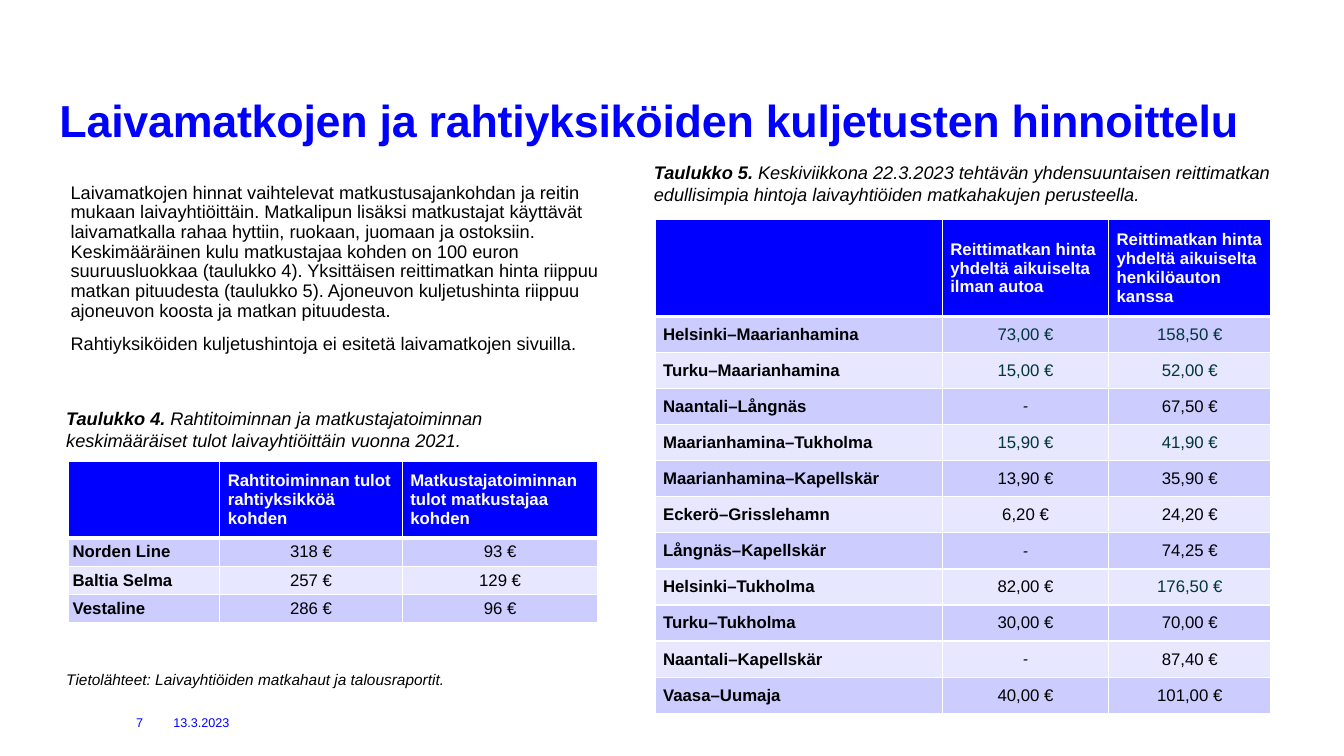
from typing import NamedTuple

from lxml.etree import SubElement
from pptx import Presentation
from pptx.dml.color import RGBColor
from pptx.enum.text import MSO_ANCHOR, PP_ALIGN
from pptx.oxml.ns import qn
from pptx.util import Cm, Pt

BLUE, BLACK, WHITE, TEAL = "0000FF", "000000", "FFFFFF", "003539"
BANDS = ("CCCCFF", "E7E7FF")

INCOME_HEADINGS = ("", "Rahtitoiminnan tulot rahtiyksikköä kohden",
                   "Matkustajatoiminnan tulot matkustajaa kohden")
INCOME_ROWS = (
    ("Norden Line", "318 €", "93 €"),
    ("Baltia Selma", "257 €", "129 €"),
    ("Vestaline", "286 €", "96 €"),
)
FARE_HEADINGS = ("", "Reittimatkan hinta yhdeltä aikuiselta ilman autoa",
                 "Reittimatkan hinta yhdeltä aikuiselta henkilöauton kanssa")
FARE_ROWS = (
    ("Helsinki–Maarianhamina", "73,00 €", "158,50 €"),
    ("Turku–Maarianhamina", "15,00 €", "52,00 €"),
    ("Naantali–Långnäs", "-", "67,50 €"),
    ("Maarianhamina–Tukholma", "15,90 €", "41,90 €"),
    ("Maarianhamina–Kapellskär", "13,90 €", "35,90 €"),
    ("Eckerö–Grisslehamn", "6,20 €", "24,20 €"),
    ("Långnäs–Kapellskär", "-", "74,25 €"),
    ("Helsinki–Tukholma", "82,00 €", "176,50 €"),
    ("Turku–Tukholma", "30,00 €", "70,00 €"),
    ("Naantali–Kapellskär", "-", "87,40 €"),
    ("Vaasa–Uumaja", "40,00 €", "101,00 €"),
)
TEAL_FARES = {"73,00 €", "158,50 €", "15,00 €", "52,00 €", "15,90 €", "41,90 €", "176,50 €"}
PRICING_TEXT = (
    "Laivamatkojen hinnat vaihtelevat matkustusajankohdan ja reitin mukaan "
    "laivayhtiöittäin. Matkalipun lisäksi matkustajat käyttävät laivamatkalla rahaa "
    "hyttiin, ruokaan, juomaan ja ostoksiin. Keskimääräinen kulu matkustajaa kohden on "
    "100 euron suuruusluokkaa (taulukko 4). Yksittäisen reittimatkan hinta riippuu matkan "
    "pituudesta (taulukko 5). Ajoneuvon kuljetushinta riippuu ajoneuvon koosta ja matkan "
    "pituudesta.",
    "Rahtiyksiköiden kuljetushintoja ei esitetä laivamatkojen sivuilla.",
)


class Box(NamedTuple):
    """Left, top, width and height in centimetres."""
    left: float
    top: float
    width: float
    height: float

    def lengths(self):
        return [Cm(value) for value in self]


def color(hex_string):
    return RGBColor.from_string(hex_string)


def write(paragraph, text, size=12, fill=BLACK, bold=False, italic=False, spacing=None):
    run = paragraph.add_run()
    run.text = text
    font = run.font
    font.name, font.size, font.bold, font.italic = "Arial", Pt(size), bold, italic
    font.color.rgb = color(fill)
    if spacing is not None:
        font._element.set("spc", str(round(spacing * 100)))


def add_frame(slide, box, anchor=MSO_ANCHOR.TOP, inset_x=0, inset_y=0):
    frame = slide.shapes.add_textbox(*box.lengths()).text_frame
    frame.word_wrap = True
    frame.vertical_anchor = anchor
    frame.margin_left = frame.margin_right = Cm(inset_x)
    frame.margin_top = frame.margin_bottom = Cm(inset_y)
    return frame


def add_title(slide, box):
    title = add_frame(slide, box, MSO_ANCHOR.BOTTOM).paragraphs[0]
    title.line_spacing = 0.85
    write(title, "Laivamatkojen ja rahtiyksiköiden kuljetusten hinnoittelu",
          size=32, fill=BLUE, bold=True, spacing=-0.2)


def add_body(slide, box):
    frame = add_frame(slide, box)
    for index, text in enumerate(PRICING_TEXT):
        paragraph = frame.add_paragraph() if index else frame.paragraphs[0]
        paragraph.line_spacing = 0.9
        paragraph.space_before = Pt(10 if index else 0)
        write(paragraph, text, size=13)


def add_caption(slide, box, label, text):
    caption = add_frame(slide, box, inset_x=0.25, inset_y=0.13).paragraphs[0]
    write(caption, label + " ", size=13, bold=True, italic=True)
    write(caption, text, size=13, italic=True)


def add_sources(slide, box):
    sources = add_frame(slide, box, inset_x=0.25, inset_y=0.13).paragraphs[0]
    write(sources, "Tietolähteet: Laivayhtiöiden matkahaut ja talousraportit.",
          size=11, italic=True)


def add_footer(slide, box, date_offset):
    for offset, text in ((0, "7"), (date_offset, "13.3.2023")):
        part = Box(box.left + offset, box.top, box.width - offset, box.height)
        write(add_frame(slide, part, MSO_ANCHOR.MIDDLE).paragraphs[0], text, size=9, fill=BLUE)


def set_borders(cell, bottom):
    """Draw white cell borders, before the fill is set."""
    properties = cell._tc.get_or_add_tcPr()
    for side, width in (("L", 1), ("R", 1), ("T", 1), ("B", bottom)):
        line = SubElement(properties, qn(f"a:ln{side}"), w=str(Pt(width)))
        fill = SubElement(line, qn("a:solidFill"))
        SubElement(fill, qn("a:srgbClr"), val=WHITE)


def style_cell(cell, fill, inset, bottom=1):
    set_borders(cell, bottom)
    cell.fill.solid()
    cell.fill.fore_color.rgb = color(fill)
    cell.vertical_anchor = MSO_ANCHOR.MIDDLE
    cell.margin_left = cell.margin_right = cell.margin_top = cell.margin_bottom = Cm(inset)


def add_price_table(slide, box, headings, rows, widths, header_height, inset, teal=()):
    """Place a table whose rows share the height left below the header."""
    table = slide.shapes.add_table(len(rows) + 1, len(headings), *box.lengths()).table
    table.horz_banding = False
    for column, width in zip(table.columns, widths):
        column.width = Cm(width)
    row_height = (box.height - header_height) / len(rows)
    for index, row in enumerate(table.rows):
        row.height = Cm(row_height if index else header_height)

    for column, heading in enumerate(headings):
        cell = table.cell(0, column)
        style_cell(cell, BLUE, 0.2, bottom=3)
        if heading:
            write(cell.text_frame.paragraphs[0], heading, fill=WHITE, bold=True)

    for index, values in enumerate(rows):
        for column, value in enumerate(values):
            cell = table.cell(index + 1, column)
            style_cell(cell, BANDS[index % 2], inset)
            paragraph = cell.text_frame.paragraphs[0]
            paragraph.alignment = PP_ALIGN.CENTER if column else PP_ALIGN.LEFT
            missing = value == "-"
            write(paragraph, value, size=11 if missing else 12, italic=missing,
                  bold=column == 0, fill=TEAL if value in teal else BLACK)


def main():
    presentation = Presentation()
    presentation.slide_width, presentation.slide_height = Cm(33.87), Cm(19.05)
    slide = presentation.slides.add_slide(presentation.slide_layouts[6])

    add_title(slide, Box(1.5, 1, 30.8, 2.7))
    add_body(slide, Box(1.78, 4.62, 13.74, 4.7))
    add_caption(slide, Box(1.42, 10.13, 13.56, 1.37), "Taulukko 4.",
                "Rahtitoiminnan ja matkustajatoiminnan keskimääräiset tulot "
                "laivayhtiöittäin vuonna 2021.")
    add_price_table(slide, Box(1.73, 11.63, 13.34, 4.03), INCOME_HEADINGS, INCOME_ROWS,
                    widths=(3.81, 4.6, 4.93), header_height=1.9, inset=0.1)
    add_caption(slide, Box(16.23, 3.94, 16.43, 1.37), "Taulukko 5.",
                "Keskiviikkona 22.3.2023 tehtävän yhdensuuntaisen reittimatkan "
                "edullisimpia hintoja laivayhtiöiden matkahakujen perusteella.")
    add_price_table(slide, Box(16.51, 5.54, 15.52, 11.96), FARE_HEADINGS, FARE_ROWS,
                    widths=(7.24, 4.19, 4.09), header_height=2.28, inset=0.2,
                    teal=TEAL_FARES)
    add_sources(slide, Box(1.42, 16.76, 10.85, 0.74))
    add_footer(slide, Box(3.43, 17.96, 2.97, 0.5), date_offset=0.94)

    presentation.save("out.pptx")


if __name__ == "__main__":
    main()
